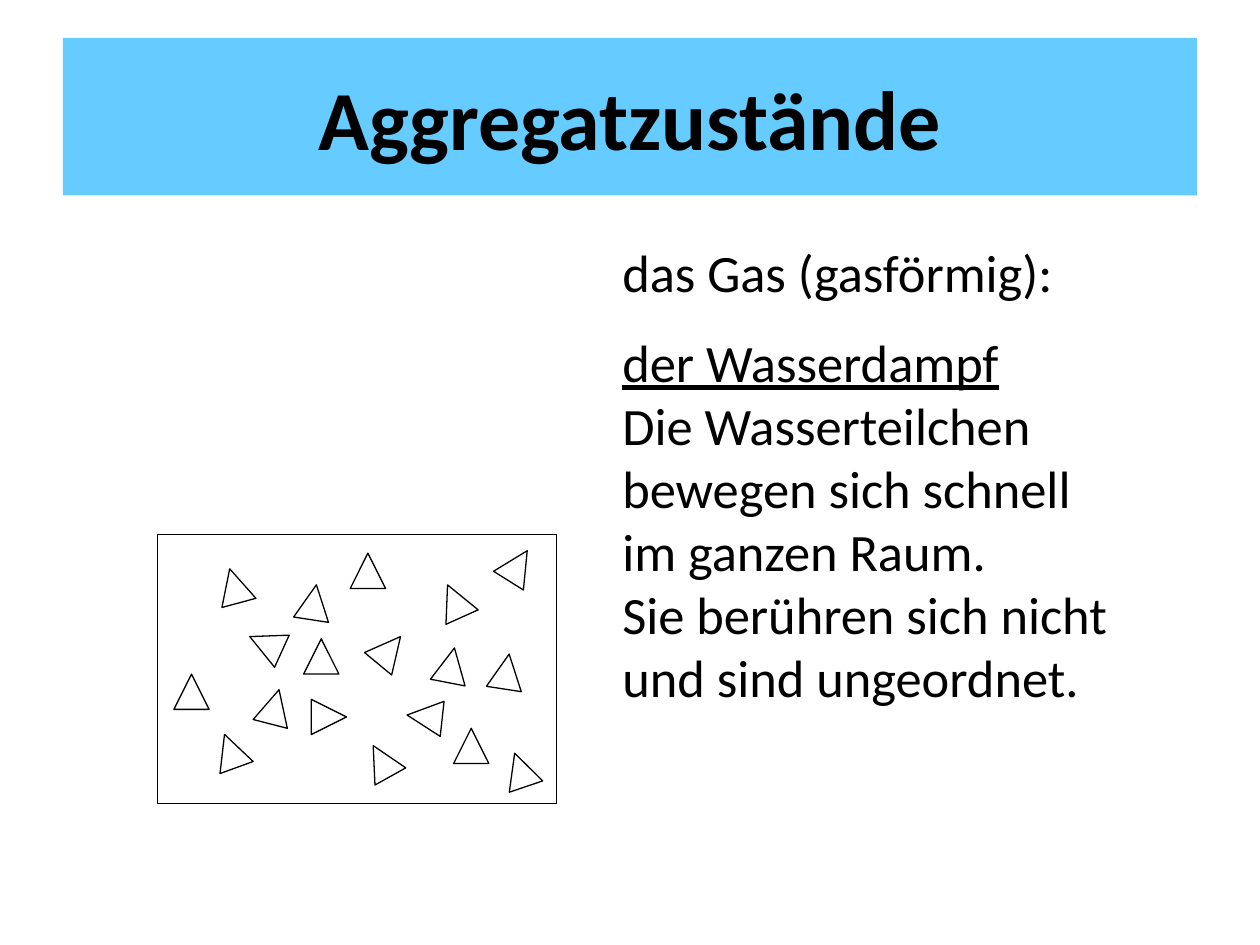
from typing import NamedTuple

from pptx import Presentation
from pptx.dml.color import RGBColor
from pptx.enum.shapes import MSO_SHAPE
from pptx.enum.text import MSO_ANCHOR, PP_ALIGN
from pptx.util import Inches, Pt

RECTANGLE = MSO_SHAPE.RECTANGLE
TRIANGLE = MSO_SHAPE.ISOSCELES_TRIANGLE
MIDDLE, TOP = MSO_ANCHOR.MIDDLE, MSO_ANCHOR.TOP
CENTER, LEFT = PP_ALIGN.CENTER, PP_ALIGN.LEFT

BLACK = RGBColor(0x00, 0x00, 0x00)
WHITE = RGBColor(0xFF, 0xFF, 0xFF)
SKY_BLUE = RGBColor(0x66, 0xCC, 0xFF)

PARTICLE_SIZE = 0.28
TITLE_FONT = {"name": "Calibri", "size": Pt(48), "bold": True}
BODY_FONT = {"name": "Calibri", "size": Pt(30)}


class Particle(NamedTuple):
    left: float
    top: float
    rotation: float = 0


class Line(NamedTuple):
    text: str
    space_before: float = 0
    underline: bool = False


PARTICLES = [
    Particle(1.72, 4.51, 344.9),
    Particle(2.41, 5.07),
    Particle(2.95, 5.02, 39.6),
    Particle(3.47, 4.63, 335.8),
    Particle(2.35, 4.64, 8.7),
    Particle(2.78, 4.39),
    Particle(3.97, 4.35, 32.1),
    Particle(2.47, 5.55, 90),
    Particle(2.89, 5.9, 330.9),
    Particle(3.23, 5.55, 276.3),
    Particle(3.44, 5.14, 11),
    Particle(3.88, 5.19, 8.7),
    Particle(3.6, 5.78),
    Particle(3.99, 5.97, 341.3),
    Particle(1.97, 4.97, 294.5),
    Particle(1.38, 5.35),
    Particle(2.04, 5.47, 14.5),
    Particle(1.69, 5.82, 340),
]

BODY_LINES = [
    Line("das Gas (gasförmig):"),
    Line("der Wasserdampf", space_before=15, underline=True),
    Line("Die Wasserteilchen bewegen sich schnell im ganzen Raum."),
    Line("Sie berühren sich nicht und sind ungeordnet."),
]


def add_filled_shape(shapes, kind, left: float, top: float, width: float,
                     height: float, fill: RGBColor, outlined: bool = True):
    shape = shapes.add_shape(kind, Inches(left), Inches(top),
                             Inches(width), Inches(height))
    shape.shadow.inherit = False
    shape.fill.solid()
    shape.fill.fore_color.rgb = fill
    if outlined:
        shape.line.color.rgb = BLACK
        shape.line.width = Pt(0.75)
    else:
        shape.line.fill.background()
    return shape


def write_lines(text_frame, lines: list[Line], font_format: dict,
                alignment, anchor) -> None:
    text_frame.word_wrap = True
    text_frame.vertical_anchor = anchor
    for index, line in enumerate(lines):
        paragraph = text_frame.add_paragraph() if index else text_frame.paragraphs[0]
        paragraph.alignment = alignment
        paragraph.space_before = Pt(line.space_before)
        run = paragraph.add_run()
        run.text = line.text
        for attribute, value in font_format.items():
            setattr(run.font, attribute, value)
        run.font.underline = line.underline
        run.font.color.rgb = BLACK


def main() -> None:
    presentation = Presentation()
    presentation.slide_width = Inches(10)
    presentation.slide_height = Inches(7.5)
    slide = presentation.slides.add_slide(presentation.slide_layouts[6])

    # Title banner
    banner = add_filled_shape(slide.shapes, RECTANGLE, 0.5, 0.3, 9, 1.25,
                              SKY_BLUE, outlined=False)
    write_lines(banner.text_frame, [Line("Aggregatzustände")], TITLE_FONT,
                CENTER, MIDDLE)

    # Description of the gas
    description = slide.shapes.add_textbox(Inches(4.84), Inches(1.86),
                                           Inches(4.09), Inches(5.2))
    write_lines(description.text_frame, BODY_LINES, BODY_FONT, LEFT, TOP)

    # Container with scattered gas particles
    container = slide.shapes.add_group_shape()
    add_filled_shape(container.shapes, RECTANGLE, 1.25, 4.24, 3.17, 2.14, WHITE)
    for particle in PARTICLES:
        triangle = add_filled_shape(container.shapes, TRIANGLE,
                                    particle.left, particle.top,
                                    PARTICLE_SIZE, PARTICLE_SIZE, WHITE)
        triangle.rotation = particle.rotation

    presentation.save("out.pptx")


if __name__ == "__main__":
    main()
